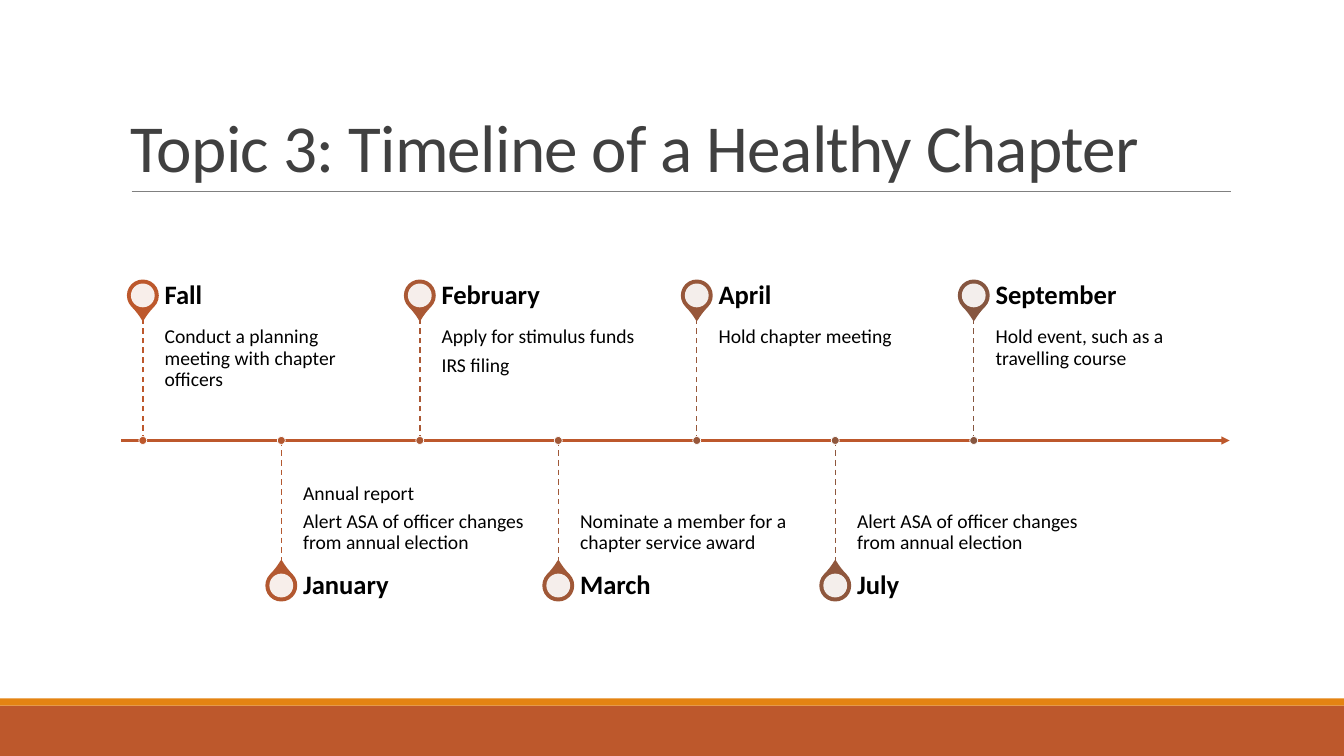
from lxml.etree import SubElement
from pptx import Presentation
from pptx.dml.color import RGBColor
from pptx.enum.dml import MSO_LINE as Dash
from pptx.enum.shapes import MSO_CONNECTOR as Link, MSO_SHAPE as Kind
from pptx.enum.text import MSO_ANCHOR as Anchor, MSO_AUTO_SIZE as Fit, PP_ALIGN as Align
from pptx.oxml.ns import qn
from pptx.util import Cm, Pt

TITLE = "Topic 3: Timeline of a Healthy Chapter"
EVENTS = [  # month, colour, tasks; odd ones hang below the axis
    ("Fall", "BD582C", ["Conduct a planning meeting with chapter officers"]),
    ("January", "B35830", ["Annual report",
                           "Alert ASA of officer changes from annual election"]),
    ("February", "AA5834", ["Apply for stimulus funds", "IRS filing"]),
    ("March", "A05837", ["Nominate a member for a chapter service award"]),
    ("April", "97573A", ["Hold chapter meeting"]),
    ("July", "8F573D", ["Alert ASA of officer changes from annual election"]),
    ("September", "865640", ["Hold event, such as a travelling course"]),
]
HUES = {"rust": "BD582C", "orange": "E48312", "rule": "808080",
        "title": "404040", "text": "000000", "white": "FFFFFF"}
FONT = "Calibri"

WIDE, HIGH = 33.87, 19.05
AXIS = 11.1                 # height of the time axis
LEFT, RIGHT = 3.05, 30.99   # ends of the time axis
FIRST, STEP = 3.6, 3.49     # first event and gap between events
STEM, HEAD = 3.11, 1.09     # stem length and month label height
PIN, HOLE, DOT = 0.76, 0.6, 0.2
INDENT, WIDTH = 0.55, 5.82  # text beside a stem

deck = Presentation()
deck.slide_width, deck.slide_height = Cm(WIDE), Cm(HIGH)
slide = deck.slides.add_slide(deck.slide_layouts[5])


def rgb(hue):
    return RGBColor.from_string(hue)


def write(box, lines, size, hue=HUES["text"], bold=False, anchor=Anchor.TOP,
          inset=(0, 0, 0, 0), lead=0.9, after=0, track=0):
    """Fill a text shape; inset is left, top, right, bottom in cm."""
    frame = box.text_frame
    frame.word_wrap, frame.auto_size = True, Fit.NONE
    frame.vertical_anchor = anchor
    (frame.margin_left, frame.margin_top,
     frame.margin_right, frame.margin_bottom) = map(Cm, inset)
    for i, line in enumerate(lines):
        para = frame.add_paragraph() if i else frame.paragraphs[0]
        para.alignment, para.line_spacing = Align.LEFT, lead
        para.space_before, para.space_after = Pt(0), Pt(after)
        run = para.add_run()
        run.text = line
        font = run.font
        font.name, font.size, font.bold = FONT, Pt(size), bold
        font.color.rgb = rgb(hue)
        if track:
            run._r.get_or_add_rPr().set("spc", str(int(track * 100)))


def label(x, y, width, height, lines, size, **style):
    box = slide.shapes.add_textbox(Cm(x), Cm(y), Cm(width), Cm(height))
    write(box, lines, size, **style)


def block(kind, x, y, width, height, fill, edge=None, weight=0):
    part = slide.shapes.add_shape(kind, Cm(x), Cm(y), Cm(width), Cm(height))
    part.shadow.inherit = False
    part.fill.solid()
    part.fill.fore_color.rgb = rgb(fill)
    if edge:
        part.line.color.rgb, part.line.width = rgb(edge), Pt(weight)
    else:
        part.line.fill.background()
    return part


def centred(kind, x, y, size, *look):
    return block(kind, x - size / 2, y - size / 2, size, size, *look)


def stroke(x1, y1, x2, y2, hue, weight, dash=None, arrow=False):
    link = slide.shapes.add_connector(Link.STRAIGHT, Cm(x1), Cm(y1), Cm(x2), Cm(y2))
    link.line.color.rgb, link.line.width = rgb(hue), Pt(weight)
    if dash:
        link.line.dash_style = dash
    if arrow:
        SubElement(link.line._get_or_add_ln(), qn("a:tailEnd"), type="triangle")
    SubElement(link._element.spPr, qn("a:effectLst"))


def event(x, month, hue, tasks, below):
    way = 1 if below else -1
    end = AXIS + way * STEM
    pin = end + way * HEAD / 2
    drop = centred(Kind.TEAR, x, pin, PIN, hue, hue, 1.25)
    drop.adjustments[0] = 1.15
    drop.rotation = 315 if below else 135
    hole = centred(Kind.OVAL, x, pin, HOLE, HUES["white"])
    tint = hole._element.spPr.find(qn("a:solidFill"))[0]
    SubElement(tint, qn("a:alpha"), val="90000")

    label(x + INDENT, min(AXIS, end), WIDTH, STEM, tasks, 14, after=5,
          anchor=Anchor.BOTTOM if below else Anchor.TOP,
          inset=(0, 0.38, 0, 0.25) if below else (0, 0.25, 0.25, 0.38))
    label(x + INDENT, pin - HEAD / 2, WIDTH, HEAD, [month], 19, bold=True,
          anchor=Anchor.MIDDLE, inset=(0, 0, 0.33, 0))
    stroke(x, AXIS, x, end, hue, 1, dash=Dash.DASH)
    centred(Kind.OVAL, x, AXIS, DOT, hue, HUES["white"], 0.5)


block(Kind.RECTANGLE, 0, 17.78, WIDE, 1.27, HUES["rust"])
block(Kind.RECTANGLE, 0, 17.6, WIDE, 0.18, HUES["orange"])
stroke(3.32, 4.83, 31.01, 4.83, HUES["rule"], 0.5)

title = slide.shapes.title
title.left, title.top, title.width, title.height = map(Cm, (LEFT, 0.79, 27.94, 4.04))
write(title, [TITLE], 48, hue=HUES["title"], anchor=Anchor.BOTTOM,
      inset=(0.25, 0.13, 0.25, 0.13), lead=0.85, track=-0.5)

stroke(LEFT, AXIS, RIGHT, AXIS, HUES["rust"], 1.5, arrow=True)
for i, (month, hue, tasks) in enumerate(EVENTS):
    event(FIRST + i * STEP, month, hue, tasks, below=i % 2 == 1)

deck.save("out.pptx")
